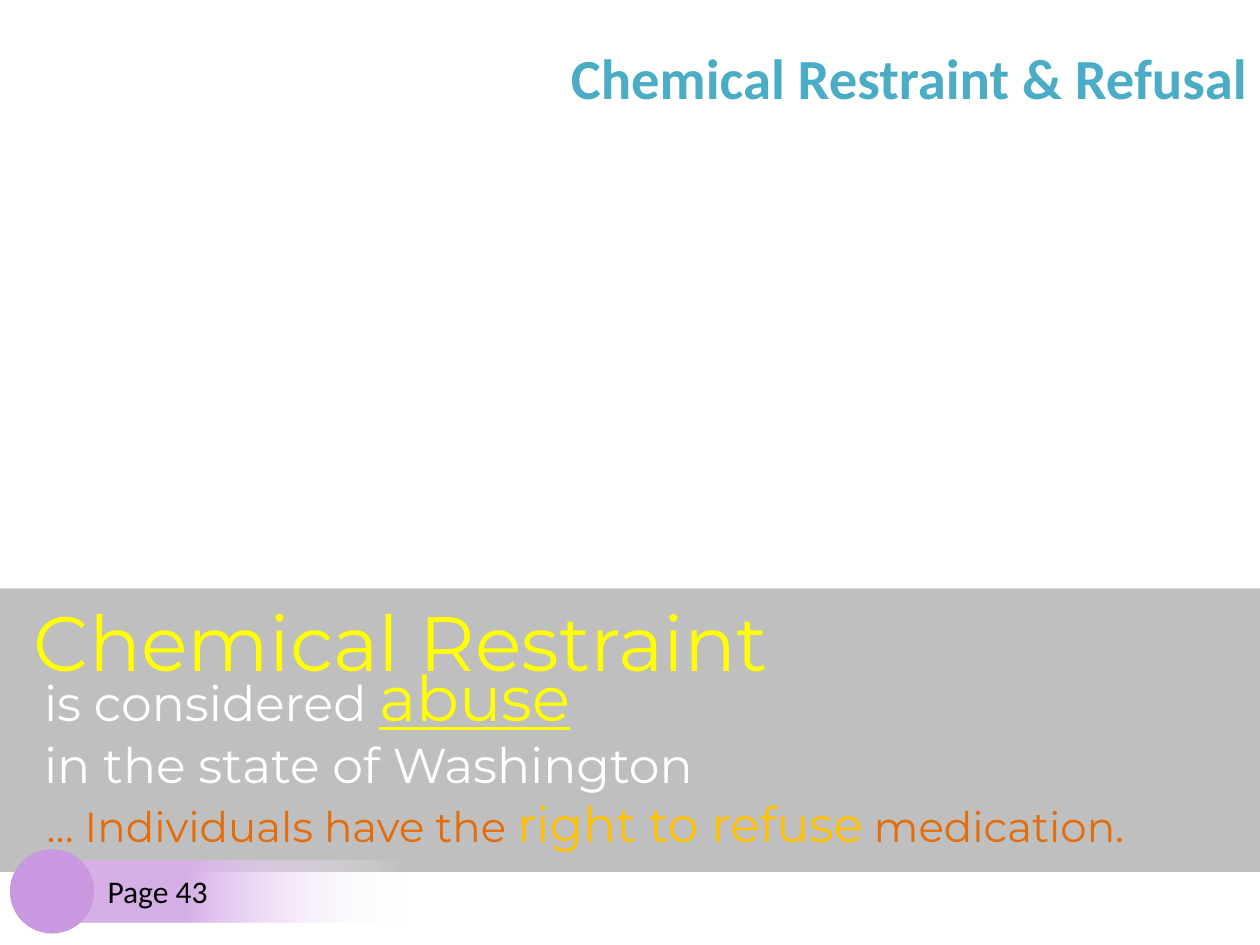
from lxml import etree
from pptx import Presentation
from pptx.dml.color import RGBColor
from pptx.enum.shapes import MSO_SHAPE
from pptx.enum.text import MSO_ANCHOR, MSO_AUTO_SIZE, PP_ALIGN
from pptx.oxml.ns import qn
from pptx.util import Cm, Pt

RECTANGLE, ROUNDED, OVAL = MSO_SHAPE.RECTANGLE, MSO_SHAPE.ROUNDED_RECTANGLE, MSO_SHAPE.OVAL
MIDDLE = MSO_ANCHOR.MIDDLE
NO_AUTOFIT = MSO_AUTO_SIZE.NONE
LEFT, RIGHT = PP_ALIGN.LEFT, PP_ALIGN.RIGHT

COLORS = {
    "white": "FFFFFF", "black": "000000", "teal": "4BACC6",
    "yellow": "FFFF00", "orange": "E46C0A", "gold": "FFC000",
    "lilac": "D7B0E8", "purple": "CA97E1",
}


def style(run, font, size, color):
    run.font.name = font
    run.font.size = Pt(size)
    run.font.color.rgb = RGBColor.from_string(COLORS[color])


def set_alpha(fill_owner, percent):
    """Give the last colour in the shape's fill an opacity."""
    color = list(fill_owner._element.spPr.iter(qn("a:srgbClr")))[-1]
    etree.SubElement(color, qn("a:alpha")).set("val", str(percent * 1000))


prs = Presentation()
prs.slide_width, prs.slide_height = Cm(25.4), Cm(19.05)
slide = prs.slides.add_slide(prs.slide_layouts[5])
shapes = slide.shapes

# Title
title = shapes.title
title.left, title.top, title.width, title.height = Cm(2.54), Cm(0.76), Cm(22.86), Cm(1.57)
title.fill.solid()
title.fill.fore_color.rgb = RGBColor.from_string(COLORS["white"])
set_alpha(title, 75)
title.text_frame.text = "Chemical Restraint & Refusal"
title.text_frame.auto_size = NO_AUTOFIT
title.text_frame.vertical_anchor = MIDDLE
heading = title.text_frame.paragraphs[0]
heading.alignment = RIGHT
style(heading.runs[0], "Calibri", 32.4, "teal")
heading.runs[0].font.bold = True

# Translucent band behind the statement
band = shapes.add_shape(RECTANGLE, 0, Cm(11.86), Cm(25.4), Cm(5.72))
band.shadow.inherit = False
band.line.fill.background()
band.fill.solid()
band.fill.fore_color.rgb = RGBColor.from_string(COLORS["black"])
set_alpha(band, 25)

# Statement: box, then paragraphs of (text, size, colour)
statement = [
    ((0.43, 11.86, 17.15, 2.54), [[("Chemical Restraint", 44, "yellow")]]),
    ((0.64, 13.16, 14.86, 3), [
        [("is considered ", 28, "white"), ("abuse", 36, "yellow")],
        [("in the state of Washington", 28, "white")],
    ]),
    ((0.69, 15.88, 24.71, 1.45), [
        [("… Individuals have the ", 24, "orange"), ("right to refuse", 28, "gold"),
         (" medication.", 24, "orange")],
    ]),
]
for box, lines in statement:
    frame = shapes.add_textbox(*map(Cm, box)).text_frame
    frame.word_wrap = True
    for number, line in enumerate(lines):
        paragraph = frame.add_paragraph() if number else frame.paragraphs[0]
        for words, size, color in line:
            run = paragraph.add_run()
            run.text = words
            style(run, "Montserrat", size, color)
            if words == "abuse":
                run.font.underline = True

# Page label fading out to the right
page = shapes.add_shape(ROUNDED, Cm(1.47), Cm(17.35), Cm(7.62), Cm(1.24))
page.shadow.inherit = False
page.line.fill.background()
page.fill.gradient()
page.fill.gradient_angle = 0
for stop, position, color in zip(page.fill.gradient_stops, (0.3, 0.88), ("lilac", "white")):
    stop.position = position
    stop.color.rgb = RGBColor.from_string(COLORS[color])
set_alpha(page, 0)
page.text_frame.text = "Page 43"
page.text_frame.margin_left = Cm(0.64)
page.text_frame.vertical_anchor = MIDDLE
page.text_frame.paragraphs[0].alignment = LEFT
style(page.text_frame.paragraphs[0].runs[0], "Calibri", 18, "black")

# Page marker
marker = shapes.add_shape(OVAL, Cm(0.2), Cm(17.12), Cm(1.7), Cm(1.7))
marker.shadow.inherit = False
marker.line.fill.background()
marker.fill.solid()
marker.fill.fore_color.rgb = RGBColor.from_string(COLORS["purple"])

prs.save("out.pptx")
